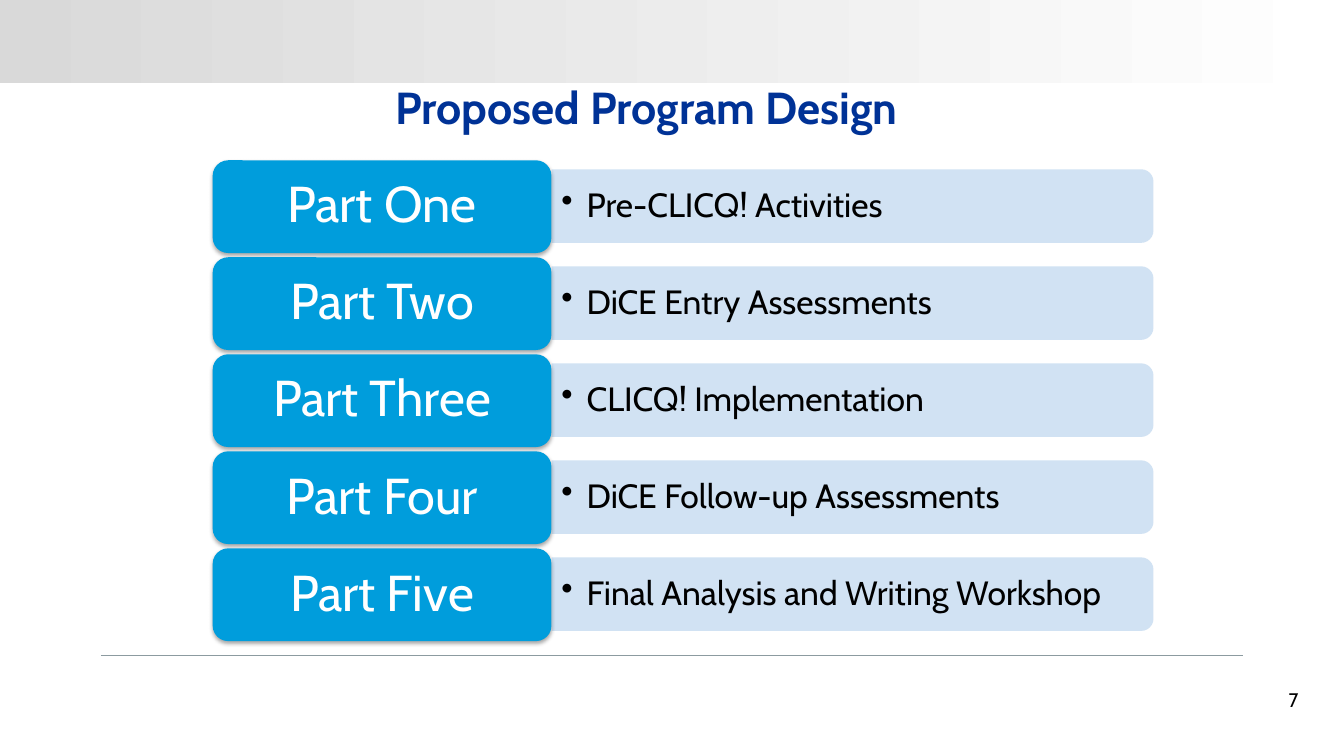
from lxml import etree
from pptx import Presentation
from pptx import util as u
from pptx.dml.color import RGBColor
from pptx.enum import shapes, text
from pptx.oxml import ns

ALIGN = text.PP_ALIGN
ANCHOR = text.MSO_ANCHOR
SHAPE = shapes.MSO_SHAPE


def color(hex_code):
    return RGBColor.from_string(hex_code)


def add_xml(parent, tag, **attributes):
    return etree.SubElement(parent, ns.qn(tag), attributes)


class Deck:
    """Holds the style and the current slide."""
    FONT = "Cabin"
    NAVY, BLUE, PALE = "003296", "009DDC", "CCDFF2"
    BLACK, WHITE, GREY, RULE = "000000", "FFFFFF", "D9D9D9", "8C9BA0"

    def __init__(self, width, height):
        self.prs = Presentation()
        self.prs.slide_width, self.prs.slide_height = u.Inches(width), u.Inches(height)
        self.slide = self.prs.slides.add_slide(self.prs.slide_layouts[6])

    def shape(self, kind, box, fill):
        shape = self.slide.shapes.add_shape(kind, *map(u.Inches, box))
        shape.shadow.inherit = False
        shape.line.fill.background()
        shape.fill.solid()
        shape.fill.fore_color.rgb = color(fill)
        return shape

    def set_words(self, shape, words, size, ink, align=ALIGN.LEFT, anchor=ANCHOR.MIDDLE,
                  insets=(0.1, 0.05), spacing=0.9, bold=False, bullet=False):
        frame = shape.text_frame
        frame.text = words
        frame.word_wrap = True
        frame.vertical_anchor = anchor
        frame.margin_left = frame.margin_right = u.Inches(insets[0])
        frame.margin_top = frame.margin_bottom = u.Inches(insets[1])
        paragraph = frame.paragraphs[0]
        paragraph.alignment = align
        paragraph.line_spacing = spacing
        if bullet:
            props = paragraph._p.get_or_add_pPr()
            props.set("marL", str(u.Inches(0.25)))
            props.set("indent", str(-u.Inches(0.25)))
            add_xml(props, "a:buChar", char="•")
        font = paragraph.runs[0].font
        font.name, font.size, font.bold = self.FONT, u.Pt(size), bold
        font.color.rgb = color(ink)

    def label(self, box, words, size, ink, **style):
        label = self.slide.shapes.add_textbox(*map(u.Inches, box))
        self.set_words(label, words, size, ink, **style)

    def header(self, box):
        header = self.shape(SHAPE.RECTANGLE, box, self.GREY)
        header.fill.gradient()
        header.fill.gradient_angle = 0
        for stop, shade in zip(header.fill.gradient_stops, (self.GREY, self.WHITE)):
            stop.color.rgb = color(shade)

    def rule(self, left, right, y):
        rule = self.slide.shapes.add_connector(
            shapes.MSO_CONNECTOR.STRAIGHT, *map(u.Inches, (left, y, right, y)))
        rule.line.color.rgb = color(self.RULE)
        rule.line.width = u.Pt(1)
        add_xml(rule._element.spPr, "a:effectLst")

    def band(self, left, top, width, height):
        """Pale bar, turned so that its rounded corners face right."""
        box = (left + (width - height) / 2, top + (height - width) / 2, height, width)
        band = self.shape(SHAPE.ROUND_2_SAME_RECTANGLE, box, self.PALE)
        band.rotation = 90
        fill_color = band._element.spPr.find(".//" + ns.qn("a:srgbClr"))
        add_xml(fill_color, "a:alpha", val="90000")

    def card(self, box, words):
        """Blue card with a soft shadow below it."""
        card = self.shape(SHAPE.ROUNDED_RECTANGLE, box, self.BLUE)
        effects = card._element.spPr.find(ns.qn("a:effectLst"))
        shadow = add_xml(effects, "a:outerShdw", blurRad=str(u.Pt(3.1)), dist=str(u.Pt(1.8)),
                         dir="5400000", rotWithShape="0")
        add_xml(add_xml(shadow, "a:srgbClr", val=self.BLACK), "a:alpha", val="35000")
        self.set_words(card, words, 36, self.WHITE, align=ALIGN.CENTER, insets=(0.15, 0.07))


def main():
    deck = Deck(13.33, 7.5)

    # Frame of the slide
    deck.header((0, 0, 13.33, 0.82))
    deck.rule(1, 12.33, 6.5)
    deck.label((3.92, 0.82, 5.5, 0.62), "Proposed Program Design", 32, deck.NAVY,
               anchor=ANCHOR.TOP, insets=(0, 0.05), spacing=0.85, bold=True)
    deck.label((9.88, 6.76, 3, 0.4), "7", 14, deck.BLACK, align=ALIGN.RIGHT, insets=(0, 0.05))

    # Program parts, one row each
    program = [
        ("Part One", "Pre-CLICQ! Activities"),
        ("Part Two", "DiCE Entry Assessments"),
        ("Part Three", "CLICQ! Implementation"),
        ("Part Four", "DiCE Follow-up Assessments"),
        ("Part Five", "Final Analysis and Writing Workshop"),
    ]
    first_top, last_top = 1.59, 5.44
    pitch = (last_top - first_top) / (len(program) - 1)
    for row, (part, activity) in enumerate(program):
        top = first_top + row * pitch
        deck.band(5.47, top + 0.09, 5.97, 0.73)
        deck.label((5.47, top + 0.13, 5.94, 0.66), activity, 24, deck.BLACK, bullet=True)
        deck.card((2.11, top, 3.36, 0.92), part)

    deck.prs.save("out.pptx")


if __name__ == "__main__":
    main()
